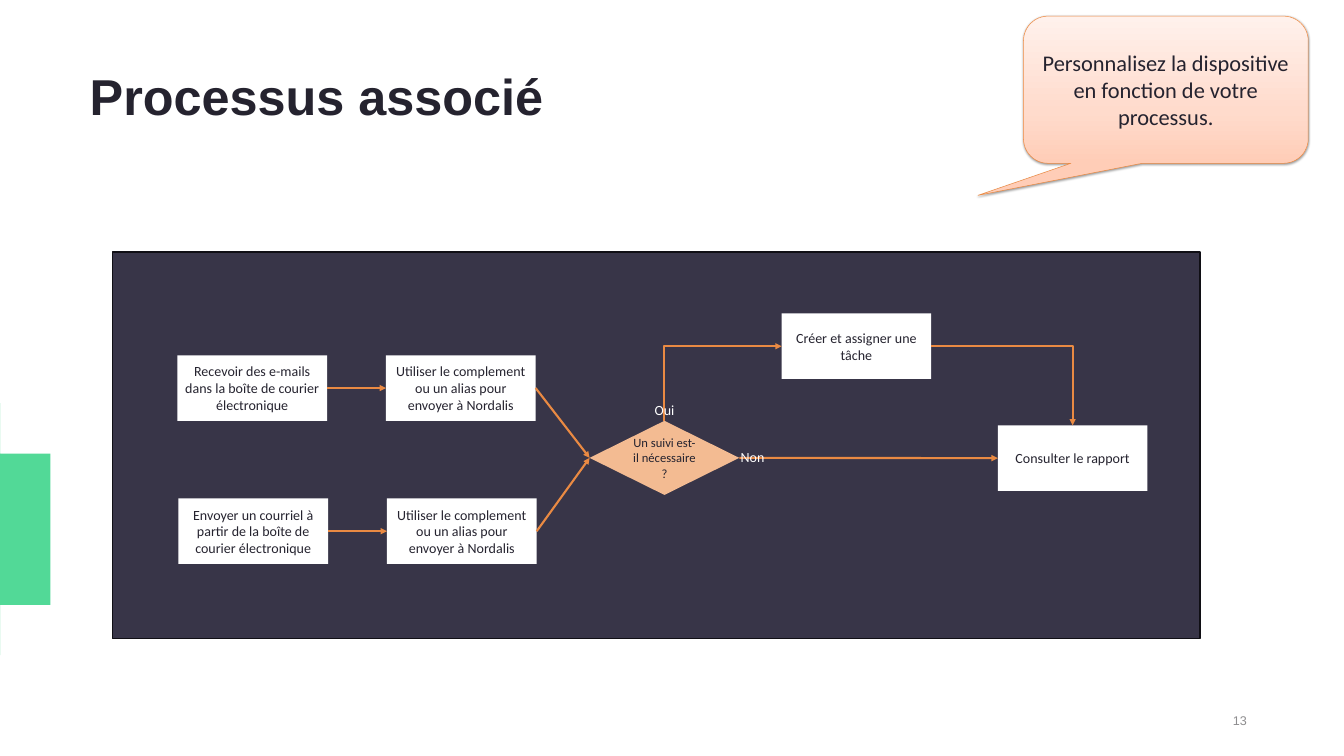
from copy import deepcopy

from lxml.etree import SubElement
from pptx import Presentation
from pptx.dml.color import RGBColor
from pptx.enum.shapes import MSO_CONNECTOR as Connector, MSO_SHAPE as Shape
from pptx.enum.text import MSO_ANCHOR as Anchor, MSO_AUTO_SIZE as AutoSize, PP_ALIGN as Align
from pptx.oxml.ns import qn
from pptx.util import Inches, Pt

INK = RGBColor(0x25, 0x23, 0x2F)
WHITE = RGBColor(0xFF, 0xFF, 0xFF)
PANEL = RGBColor(0x38, 0x35, 0x48)
PANEL_EDGE = RGBColor(0x10, 0x0F, 0x15)
GREEN = RGBColor(0x52, 0xD9, 0x97)
ORANGE = RGBColor(0xEA, 0x8A, 0x43)
PEACH = RGBColor(0xF3, 0xBB, 0x92)
GREY = RGBColor(0x8E, 0x8D, 0x8F)
CALLOUT_STOPS = [
    (0, RGBColor(0xFF, 0xCD, 0xB7)),
    (0.35, RGBColor(0xFF, 0xDB, 0xCC)),
    (1, RGBColor(0xFF, 0xF1, 0xEC)),
]

TITLE = "Processus associé"
CALLOUT = "Personnalisez la dispositive en fonction de votre processus."
SEND = "Utiliser le complement ou un alias pour envoyer à Nordalis"
STEP_SIZE = (2.97, 1.3)
STEPS = {  # name: (left, top, text)
    "receive": (3.52, 7.05, "Recevoir des e-mails dans la boîte de courier électronique"),
    "forward": (7.66, 7.05, SEND),
    "task": (15.51, 6.22, "Créer et assigner une tâche"),
    "report": (19.8, 8.44, "Consulter le rapport"),
    "write": (3.54, 9.89, "Envoyer un courriel à partir de la boîte de courier électronique"),
    "copy": (7.68, 9.89, SEND),
}
DECISION = (11.7, 8.35, 2.97, 1.47, "Un suivi est-il nécessaire ?")
TOP, LEFT, BOTTOM, RIGHT = range(4)
STRAIGHT_LINKS = [
    ("receive", RIGHT, "forward", LEFT),
    ("write", RIGHT, "copy", LEFT),
    ("forward", RIGHT, "decision", LEFT),
    ("copy", RIGHT, "decision", LEFT),
    ("decision", RIGHT, "report", LEFT),
]
ELBOW_LINKS = [("decision", TOP, "task", LEFT), ("task", RIGHT, "report", TOP)]
ANSWERS = [(12.61, 7.91, "Oui"), (14.36, 8.84, "Non")]

BLOB_START = (0.87, 11.51)
BLOB_CURVES = [
    ((0.23, 13.14), (-1.32, 14.11), (-1.92, 12.48)),
    ((-2.51, 10.86), (-3.61, 10.19), (-2.98, 9.28)),
    ((-2.32, 8.3), (-0.95, 8.13), (-0.3, 8.51)),
    ((0.34, 8.88), (1.5, 9.89), (0.87, 11.51)),
]


def write(shape, text, size, color=INK, font="Calibri", align=Align.CENTER,
          anchor=Anchor.MIDDLE, bold=False):
    frame = shape.text_frame
    frame.word_wrap = True
    frame.vertical_anchor = anchor
    paragraph = frame.paragraphs[0]
    paragraph.alignment = align
    run = paragraph.add_run()
    run.text = text
    run.font.color.rgb = color
    for name, value in dict(name=font, size=Pt(size), bold=bold).items():
        setattr(run.font, name, value)


def add_box(shapes, kind, box, fill=None, line=None, line_width=1):
    shape = shapes.add_shape(kind, *map(Inches, box))
    shape.shadow.inherit = False
    if fill is not None:
        shape.fill.solid()
        shape.fill.fore_color.rgb = fill
    if line is None:
        shape.line.fill.background()
    else:
        shape.line.color.rgb = line
        shape.line.width = Pt(line_width)
    return shape


def add_text(shapes, box, text, size, color, **options):
    write(shapes.add_textbox(*map(Inches, box)), text, size, color, **options)


def add_blob(shapes, steps=24):
    """Draw the closed outline by sampling its cubic curves."""
    points, start = [], BLOB_START
    for first, second, end in BLOB_CURVES:
        for step in range(1, steps + 1):
            t = step / steps
            weights = ((1 - t) ** 3, 3 * t * (1 - t) ** 2, 3 * t * t * (1 - t), t ** 3)
            points.append(tuple(
                sum(weight * value for weight, value in zip(weights, axis))
                for axis in zip(start, first, second, end)))
        start = end
    builder = shapes.build_freeform(*BLOB_START, scale=Inches(1))
    builder.add_line_segments(points, close=True)
    blob = builder.convert_to_shape()
    blob.shadow.inherit = False
    blob.fill.solid()
    blob.fill.fore_color.rgb = GREEN
    blob.line.fill.background()


def add_link(shapes, nodes, link, kind):
    start, start_side, end, end_side = link
    connector = shapes.add_connector(kind, 0, 0, 0, 0)
    connector.begin_connect(nodes[start], start_side)
    connector.end_connect(nodes[end], end_side)
    connector.line.color.rgb = ORANGE
    connector.line.width = Pt(3)
    properties = connector._element.spPr
    SubElement(properties.find(qn("a:ln")), qn("a:tailEnd"), type="triangle")
    SubElement(properties, qn("a:effectLst"))
    if kind == Connector.ELBOW:
        properties.find(qn("a:prstGeom")).set("prst", "bentConnector2")
        if start_side == TOP:
            turn_upward(connector)


def turn_upward(connector):
    """Make a one-corner elbow leave upward, then go right."""
    left, top, width, height = connector.left, connector.top, connector.width, connector.height
    connector.left = left + (width - height) // 2
    connector.top = top + (height - width) // 2
    connector.width, connector.height = height, width
    transform = connector._element.spPr.find(qn("a:xfrm"))
    for name, value in dict(rot="5400000", flipH="1", flipV="1").items():
        transform.set(name, value)


def add_callout(shapes):
    callout = add_box(shapes, Shape.ROUNDED_RECTANGULAR_CALLOUT, (20.31, 0.32, 5.65, 2.92),
                      line=ORANGE, line_width=0.75)
    for index, value in enumerate((-0.66, 0.718, 0.167)):
        callout.adjustments[index] = value
    callout.fill.gradient()
    callout.fill.gradient_angle = 90
    properties = callout._element.spPr
    stop_list = properties.find(qn("a:gradFill")).find(qn("a:gsLst"))
    stop_list.append(deepcopy(stop_list[-1]))
    for stop, (position, color) in zip(callout.fill.gradient_stops, CALLOUT_STOPS):
        stop.position = position
        stop.color.rgb = color
    shadow = SubElement(properties.find(qn("a:effectLst")), qn("a:outerShdw"),
                        blurRad=str(Pt(3.1)), dist=str(Pt(1.6)), dir="5400000", rotWithShape="0")
    shade = SubElement(shadow, qn("a:srgbClr"), val="000000")
    SubElement(shade, qn("a:alpha"), val="38000")
    write(callout, CALLOUT, 32)


def main():
    presentation = Presentation()
    presentation.slide_width, presentation.slide_height = Inches(26.67), Inches(15)
    slide = presentation.slides.add_slide(presentation.slide_layouts[5])
    shapes = slide.shapes

    title = shapes.title
    title.left, title.top, title.width, title.height = map(Inches, (1.68, 1.59, 23, 1.65))
    write(title, TITLE, 72, font="Arial", align=Align.LEFT, bold=True)
    title.text_frame.auto_size = AutoSize.NONE
    title.text_frame.margin_bottom = Inches(1.1)

    add_blob(shapes)
    add_box(shapes, Shape.RECTANGLE, (2.23, 5, 21.58, 7.67), PANEL, PANEL_EDGE, 2)
    add_text(shapes, (18.84, 13.9, 6, 0.8), "13", 18, GREY, font="Arial", align=Align.RIGHT)

    nodes = {}
    for name, (left, top, text) in STEPS.items():
        nodes[name] = add_box(shapes, Shape.RECTANGLE, (left, top, *STEP_SIZE), WHITE)
        write(nodes[name], text, 20)
    *decision_box, question = DECISION
    nodes["decision"] = add_box(shapes, Shape.DIAMOND, decision_box, PEACH)
    write(nodes["decision"], question, 18)

    for link in STRAIGHT_LINKS:
        add_link(shapes, nodes, link, Connector.STRAIGHT)
    for link in ELBOW_LINKS:
        add_link(shapes, nodes, link, Connector.ELBOW)
    for left, top, answer in ANSWERS:
        add_text(shapes, (left, top, 1.15, 0.44), answer, 20, WHITE, anchor=Anchor.TOP)
    add_callout(shapes)

    presentation.save("out.pptx")


if __name__ == "__main__":
    main()
